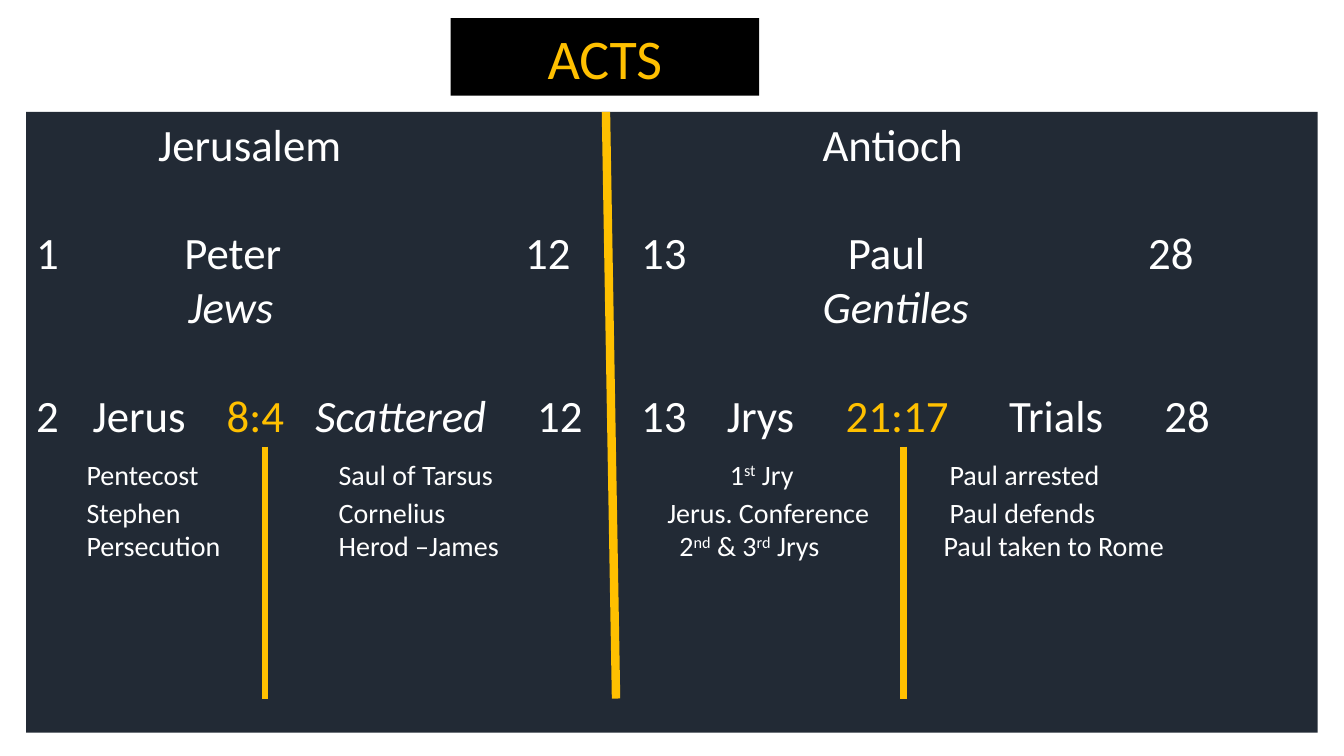
import pptx
import pptx.dml.color
import pptx.enum.shapes
import pptx.enum.text
import pptx.oxml
import pptx.oxml.ns
import pptx.util
from pptx.util import Inches

NAVY = pptx.dml.color.RGBColor(0x22, 0x2A, 0x35)
BLACK = pptx.dml.color.RGBColor(0, 0, 0)
WHITE = pptx.dml.color.RGBColor(0xFF, 0xFF, 0xFF)
GOLD = pptx.dml.color.RGBColor(0xFF, 0xC0, 0x00)
FONT = "Calibri"

# Each row: size, space before (points), cells of (tab position, runs).
# A run is plain text or (text, style).
OUTLINE = [
    (32, 0, [(1.21, ["Jerusalem"]), (7.8, ["Antioch"])]),
    (32, 39, [(0, ["1"]), (1.47, ["Peter"]), (4.85, ["12"]),
              (6, ["13"]), (8.05, ["Paul"]), (11.03, ["28"])]),
    (32, 0, [(1.51, [("Jews", "italic")]), (7.8, [("Gentiles", "italic")])]),
    (32, 39, [(0, ["2"]), (0.56, ["Jerus"]), (1.89, [("8:4", "gold")]),
              (2.77, [("Scattered", "italic")]), (4.97, ["12"]),
              (6, ["13"]), (6.85, ["Jrys"]), (8.03, [("21:17", "gold")]),
              (9.65, ["Trials"]), (11.19, ["28"])]),
    (20, 11.4, [(0.5, ["Pentecost"]), (3, ["Saul of Tarsus"]),
                (6.88, ["1", ("st", "super"), " Jry"]),
                (9.06, ["Paul arrested"])]),
    (20, 3.2, [(0.5, ["Stephen"]), (3, ["Cornelius"]),
               (6.26, ["Jerus. Conference"]), (9.06, ["Paul defends"])]),
    (20, 0, [(0.5, ["Persecution"]), (3, ["Herod –James"]),
             (6.38, ["2", ("nd", "super"), " & 3", ("rd", "super"), " Jrys"]),
             (9, ["Paul taken to Rome"])]),
]


def add_run(paragraph, text, size, style=""):
    run = paragraph.add_run()
    run.text = text
    run.font.name = FONT
    run.font.size = pptx.util.Pt(size)
    run.font.color.rgb = GOLD if style == "gold" else WHITE
    if style == "italic":
        run.font.italic = True
    if style == "super":
        run.font._element.set("baseline", "30000")


def set_tab_stops(paragraph, positions):
    properties = paragraph._p.get_or_add_pPr()
    tab_list = pptx.oxml.parse_xml(
        f"<a:tabLst {pptx.oxml.ns.nsdecls('a')}/>")
    for position in positions:
        tab_list.append(pptx.oxml.parse_xml(
            f'<a:tab {pptx.oxml.ns.nsdecls("a")} '
            f'pos="{int(Inches(position))}" algn="l"/>'))
    properties.append(tab_list)


def add_title(slide, left, top, width, height):
    title = slide.shapes.title
    title.left, title.top = Inches(left), Inches(top)
    title.width, title.height = Inches(width), Inches(height)
    title.fill.solid()
    title.fill.fore_color.rgb = BLACK
    title.text_frame.auto_size = pptx.enum.text.MSO_AUTO_SIZE.NONE
    title.text_frame.vertical_anchor = pptx.enum.text.MSO_ANCHOR.MIDDLE
    paragraph = title.text_frame.paragraphs[0]
    paragraph.alignment = pptx.enum.text.PP_ALIGN.CENTER
    add_run(paragraph, "ACTS", 40, "gold")


def add_outline(slide, left, top, width, height):
    panel = slide.shapes.add_shape(
        pptx.enum.shapes.MSO_SHAPE.RECTANGLE,
        Inches(left), Inches(top), Inches(width), Inches(height))
    panel.shadow.inherit = False
    panel.fill.solid()
    panel.fill.fore_color.rgb = NAVY
    panel.line.fill.background()
    frame = panel.text_frame
    frame.word_wrap = True
    frame.vertical_anchor = pptx.enum.text.MSO_ANCHOR.TOP

    for index, (size, space_before, cells) in enumerate(OUTLINE):
        paragraph = frame.add_paragraph() if index else frame.paragraphs[0]
        paragraph.alignment = pptx.enum.text.PP_ALIGN.LEFT
        paragraph.space_before = pptx.util.Pt(space_before)
        set_tab_stops(paragraph, [stop for stop, _ in cells if stop])
        for stop, runs in cells:
            if stop:
                add_run(paragraph, "\t", size)
            for run in runs:
                text, style = (run, "") if isinstance(run, str) else run
                add_run(paragraph, text, size, style)


def add_dividers(slide, left, top, bottom):
    # Start x, start y and end x from the panel corner, then line width
    for start_x, start_y, end_x, weight in [
            (5.75, 0, 5.85, 6), (2.37, 3.32, 2.37, 4.5), (8.7, 3.32, 8.7, 4.5)]:
        divider = slide.shapes.add_connector(
            pptx.enum.shapes.MSO_CONNECTOR.STRAIGHT,
            Inches(left + start_x), Inches(top + start_y),
            Inches(left + end_x), Inches(bottom))
        divider.line.color.rgb = GOLD
        divider.line.width = pptx.util.Pt(weight)
        divider._element.spPr.append(pptx.oxml.parse_xml(
            f"<a:effectLst {pptx.oxml.ns.nsdecls('a')}/>"))


def main():
    presentation = pptx.Presentation()
    presentation.slide_width = Inches(13.33)
    presentation.slide_height = Inches(7.5)
    slide = presentation.slides.add_slide(presentation.slide_layouts[5])
    add_outline(slide, 0.26, 1.11, 12.81, 6.16)
    add_title(slide, 4.47, 0.18, 3.06, 0.77)
    add_dividers(slide, 0.26, 1.11, 6.93)
    presentation.save("out.pptx")


if __name__ == "__main__":
    main()
